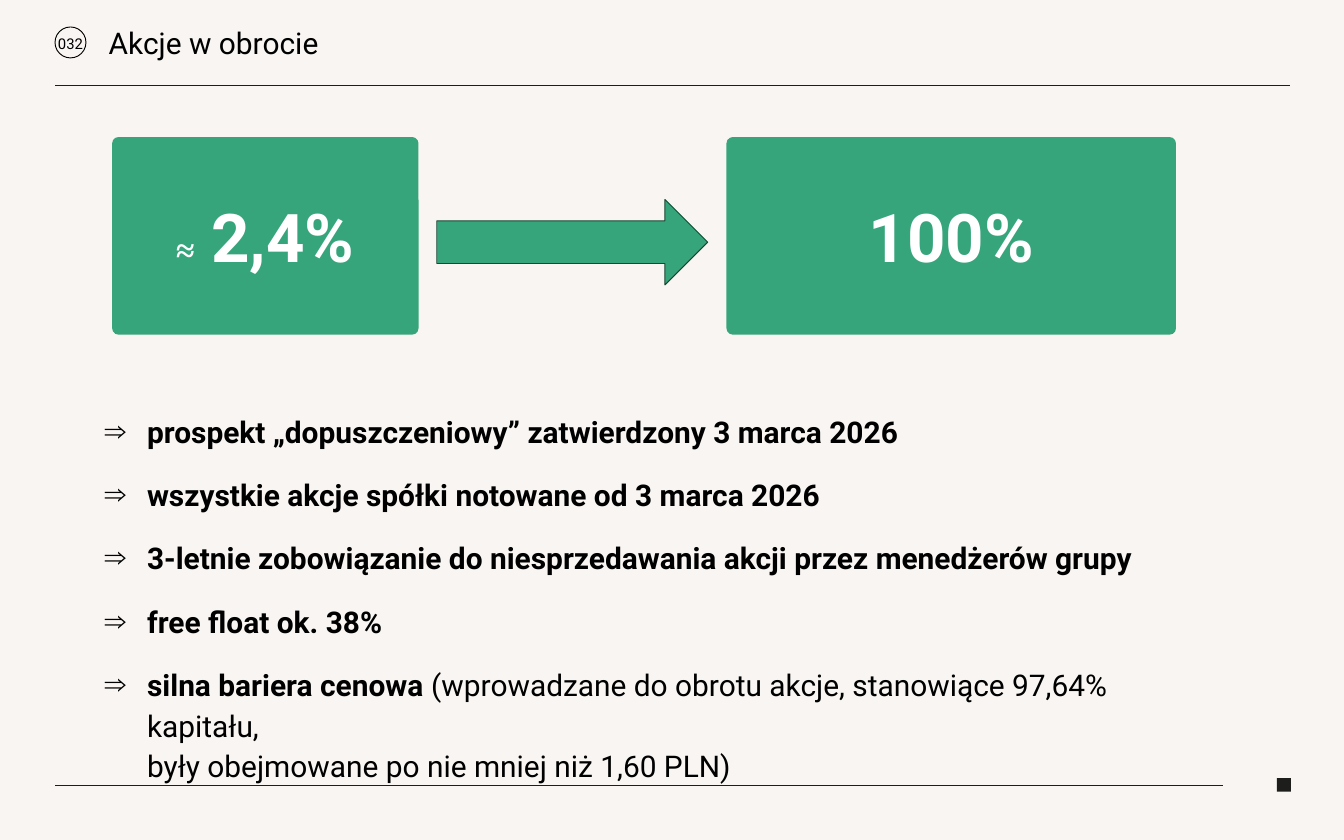
from lxml import etree
from pptx import Presentation
from pptx.dml.color import RGBColor
from pptx.enum.shapes import MSO_CONNECTOR, MSO_SHAPE
from pptx.enum.text import MSO_ANCHOR, MSO_AUTO_SIZE, PP_ALIGN
from pptx.oxml.ns import qn
from pptx.util import Cm, Pt

PAPER = RGBColor(0xF8, 0xF5, 0xF2)
INK = RGBColor(0x1D, 0x1D, 0x1B)
BLACK = RGBColor(0, 0, 0)
WHITE = RGBColor(255, 255, 255)
GREEN = RGBColor(0x37, 0xA5, 0x7C)
DARK_GREEN = RGBColor(0x18, 0x48, 0x36)
SANS = "Roboto"
SERIF = "Times New Roman"
MARGIN = 2.08
CARD_TOP, CARD_HEIGHT = 5.18, 7.47


class Deck:
    def __init__(self, width, height):
        self.prs = Presentation()
        self.prs.slide_width, self.prs.slide_height = Cm(width), Cm(height)
        self.s = self.prs.slides.add_slide(self.prs.slide_layouts[6])
        self.s.background.fill.solid()
        self.s.background.fill.fore_color.rgb = PAPER

    def style(self, r, size, color=BLACK, bold=False, font=SANS):
        r.font.size, r.font.name, r.font.bold = Pt(size), font, bold
        r.font.color.rgb = color

    def rule(self, x1, x2, y):
        line = self.s.shapes.add_connector(
            MSO_CONNECTOR.STRAIGHT, Cm(x1), Cm(y), Cm(x2), Cm(y))
        line.line.color.rgb, line.line.width = INK, Pt(0.75)
        etree.SubElement(line._element.spPr, qn("a:effectLst"))

    def shape(self, kind, x, y, w, h, fill=None, line=None):
        sp = self.s.shapes.add_shape(kind, Cm(x), Cm(y), Cm(w), Cm(h))
        sp.shadow.inherit = False
        if fill is None:
            sp.fill.background()
        else:
            sp.fill.solid()
            sp.fill.fore_color.rgb = fill
        if line is None:
            sp.line.fill.background()
        else:
            sp.line.color.rgb, sp.line.width = line, Pt(1)
        return sp

    def card(self, x, w, parts):
        sp = self.shape(MSO_SHAPE.ROUNDED_RECTANGLE, x, CARD_TOP, w, CARD_HEIGHT, GREEN)
        sp.adjustments[0] = 0.032
        tf = sp.text_frame
        tf.vertical_anchor = MSO_ANCHOR.MIDDLE
        p = tf.paragraphs[0]
        p.alignment = PP_ALIGN.CENTER
        for text, size, font in parts:
            r = p.add_run()
            r.text = text
            self.style(r, size, WHITE, True, font)

    def text_frame(self, x, y, w, h, anchor):
        tf = self.s.shapes.add_textbox(Cm(x), Cm(y), Cm(w), Cm(h)).text_frame
        tf.word_wrap = True
        tf.vertical_anchor = anchor
        tf.margin_left = tf.margin_right = tf.margin_top = tf.margin_bottom = 0
        return tf

    def label(self, text, x, y, w, h, size, align=PP_ALIGN.LEFT, spacing=1.0):
        tf = self.text_frame(x, y, w, h, MSO_ANCHOR.MIDDLE)
        tf.text = text
        p = tf.paragraphs[0]
        p.alignment, p.line_spacing = align, spacing
        self.style(p.runs[0], size)

    def bullets(self, items, x, y, w, h, size):
        tf = self.text_frame(x, y, w, h, MSO_ANCHOR.TOP)
        tf.auto_size = MSO_AUTO_SIZE.SHAPE_TO_FIT_TEXT
        for i, (lead, *lines) in enumerate(items):
            p = tf.add_paragraph() if i else tf.paragraphs[0]
            pPr = p._p.get_or_add_pPr()
            pPr.set("marL", str(Cm(1.6)))
            pPr.set("indent", str(-Cm(1.6)))
            etree.SubElement(pPr, qn("a:buFont"), typeface=SERIF)
            etree.SubElement(pPr, qn("a:buChar"), char="⇒")
            p.line_spacing, p.space_after = 1.14, Pt(12)
            if i:
                p.space_before = Pt(12)
            p.text = lead
            self.style(p.runs[0], size, bold=True)
            for n, line in enumerate(lines):
                if n:
                    p.add_line_break()
                r = p.add_run()
                r.text = line
                self.style(r, size)


def main():
    deck = Deck(50.8, 31.75)
    deck.rule(MARGIN, 48.77, 3.23)
    deck.rule(MARGIN, 46.23, 29.67)
    deck.shape(MSO_SHAPE.RECTANGLE, 48.26, 29.41, 0.53, 0.51, INK)
    deck.shape(MSO_SHAPE.OVAL, MARGIN, 1.02, 1.17, 1.17, line=BLACK)
    deck.label("032", MARGIN, 1.09, 1.17, 1.14, 15.9, PP_ALIGN.CENTER)
    deck.label("Akcje w obrocie", 4.11, 0.15, 38.23, 3.07, 32, spacing=0.9)

    deck.card(4.24, 11.58, [("≈", 36, SERIF), (" 2,4%", 72, SANS)])
    deck.bullets([
        ("prospekt „dopuszczeniowy” zatwierdzony 3 marca 2026",),
        ("wszystkie akcje spółki notowane od 3 marca 2026",),
        ("3-letnie zobowiązanie do niesprzedawania akcji przez menedżerów grupy",),
        ("free float ok. 38%",),
        ("silna bariera cenowa",
         " (wprowadzane do obrotu akcje, stanowiące 97,64% kapitału, ",
         "były obejmowane po nie mniej niż 1,60 PLN)"),
    ], 3.96, 15.44, 41.83, 12.67, 32)
    deck.card(27.46, 16.99, [("100%", 72, SANS)])
    deck.shape(MSO_SHAPE.RIGHT_ARROW, 16.51, 7.54, 10.24, 3.23, GREEN, DARK_GREEN)
    deck.prs.save("out.pptx")


if __name__ == "__main__":
    main()
